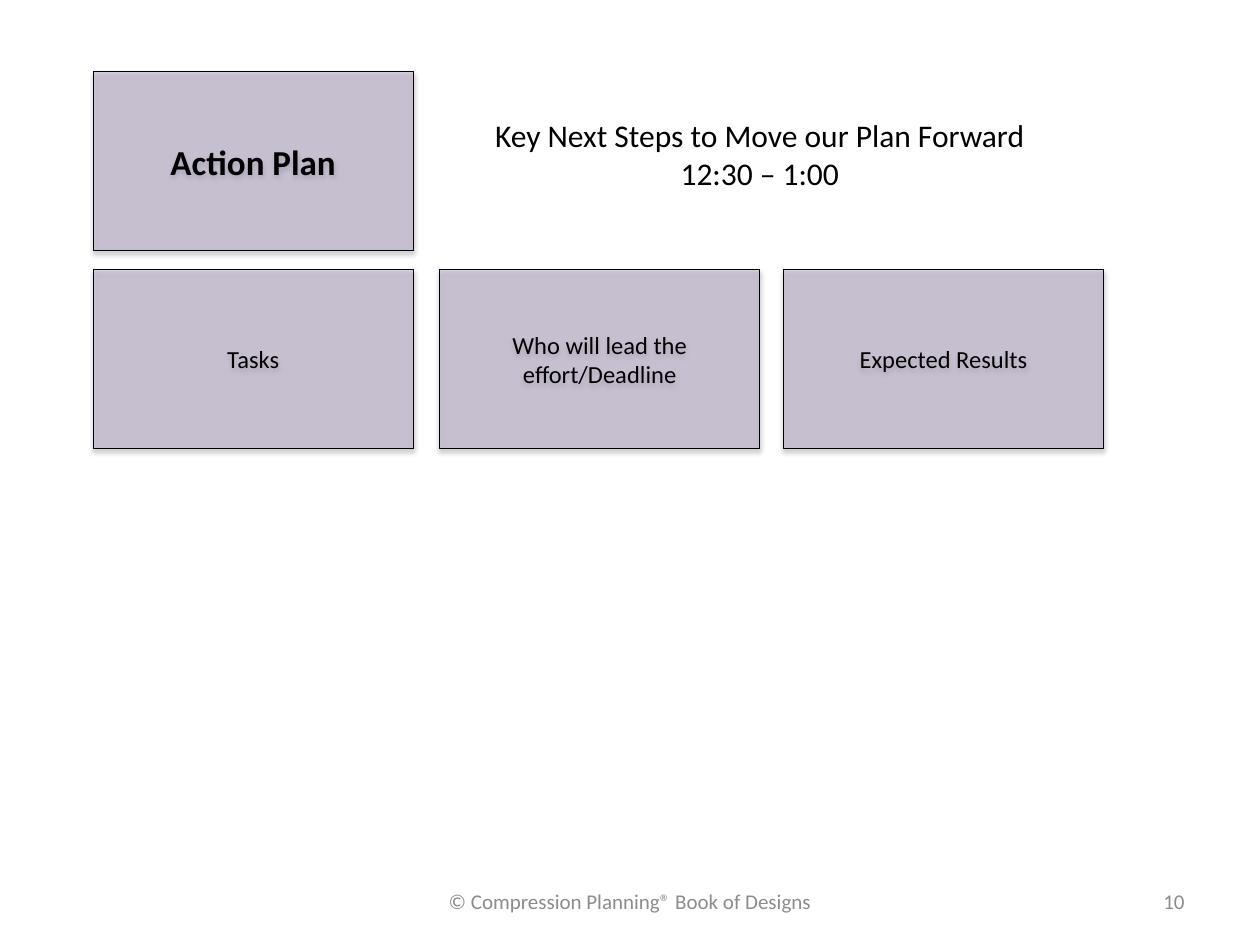
import pptx
import pptx.dml.color
import pptx.enum.shapes
import pptx.enum.text
import pptx.oxml
import pptx.oxml.ns
import pptx.util

Pt = pptx.util.Pt
ALIGN = pptx.enum.text.PP_ALIGN
ANCHOR = pptx.enum.text.MSO_ANCHOR
BLACK = pptx.dml.color.RGBColor(0x00, 0x00, 0x00)
GRAY = pptx.dml.color.RGBColor(0x8C, 0x8C, 0x8C)
MAUVE = pptx.dml.color.RGBColor(0xB3, 0xA2, 0xC7)
FONT = "Calibri"
CARD_W, CARD_H = 182.9, 102.2
LEFT = 53.3
HEAD_TOP, ROW_TOP = 41, 154.1
CARDS = [
    (LEFT, HEAD_TOP, "Action Plan", 20, True),
    (LEFT, ROW_TOP, "Tasks", 14, False),
    (251.3, ROW_TOP, "Who will lead the effort/Deadline", 14, False),
    (447.8, ROW_TOP, "Expected Results", 14, False),
]


def write(shape, text, size, color, align=ALIGN.CENTER, bold=False, anchor=ANCHOR.MIDDLE):
    frame = shape.text_frame
    frame.word_wrap = True
    frame.vertical_anchor = anchor
    frame.text = text
    for para in frame.paragraphs:
        para.alignment = align
        for run in para.runs:
            run.font.name = FONT
            run.font.size = Pt(size)
            run.font.bold = bold
            run.font.color.rgb = color


def fade(shape, alpha):
    tint = shape.fill._xPr.find(".//" + pptx.oxml.ns.qn("a:srgbClr"))
    tint.append(pptx.oxml.parse_xml(
        f'<a:alpha {pptx.oxml.ns.nsdecls("a")} val="{alpha * 1000}"/>'))


def shade(shape):
    shape.shadow.inherit = False
    glow = shape._element.spPr.find(pptx.oxml.ns.qn("a:effectLst"))
    glow.append(pptx.oxml.parse_xml(
        f'<a:outerShdw {pptx.oxml.ns.nsdecls("a")} blurRad="{Pt(3.1)}" dist="{Pt(1.8)}" '
        'dir="5400000" rotWithShape="0"><a:srgbClr val="000000">'
        '<a:alpha val="35000"/></a:srgbClr></a:outerShdw>'))


def add_card(slide, left, top, text, size, bold):
    card = slide.shapes.add_shape(
        pptx.enum.shapes.MSO_SHAPE.RECTANGLE, Pt(left), Pt(top), Pt(CARD_W), Pt(CARD_H))
    card.fill.solid()
    card.fill.fore_color.rgb = MAUVE
    fade(card, 45)
    card.line.color.rgb = BLACK
    card.line.width = Pt(0.75)
    shade(card)
    write(card, text, size, BLACK, bold=bold)


def add_text(slide, left, top, width, height, text, size, color, **style):
    box = slide.shapes.add_textbox(Pt(left), Pt(top), Pt(width), Pt(height))
    write(box, text, size, color, **style)
    return box


def main():
    """Build the action plan slide and save it."""
    deck = pptx.Presentation()
    deck.slide_width, deck.slide_height = Pt(720), Pt(540)
    slide = deck.slides.add_slide(deck.slide_layouts[6])
    for card in CARDS:
        add_card(slide, *card)
    steps = add_text(slide, 272.9, 62.6, 322.6, 51,
                     "Key Next Steps to Move our Plan Forward\n12:30 – 1:00",
                     18, BLACK, anchor=ANCHOR.TOP)
    steps.text_frame.auto_size = pptx.enum.text.MSO_AUTO_SIZE.SHAPE_TO_FIT_TEXT
    add_text(slide, 246, 500.5, 228, 28.8,
             "© Compression Planning® Book of Designs", 12, GRAY)
    add_text(slide, 516, 500.5, 168, 28.8, "10", 12, GRAY, align=ALIGN.RIGHT)
    deck.save("out.pptx")


if __name__ == "__main__":
    main()
